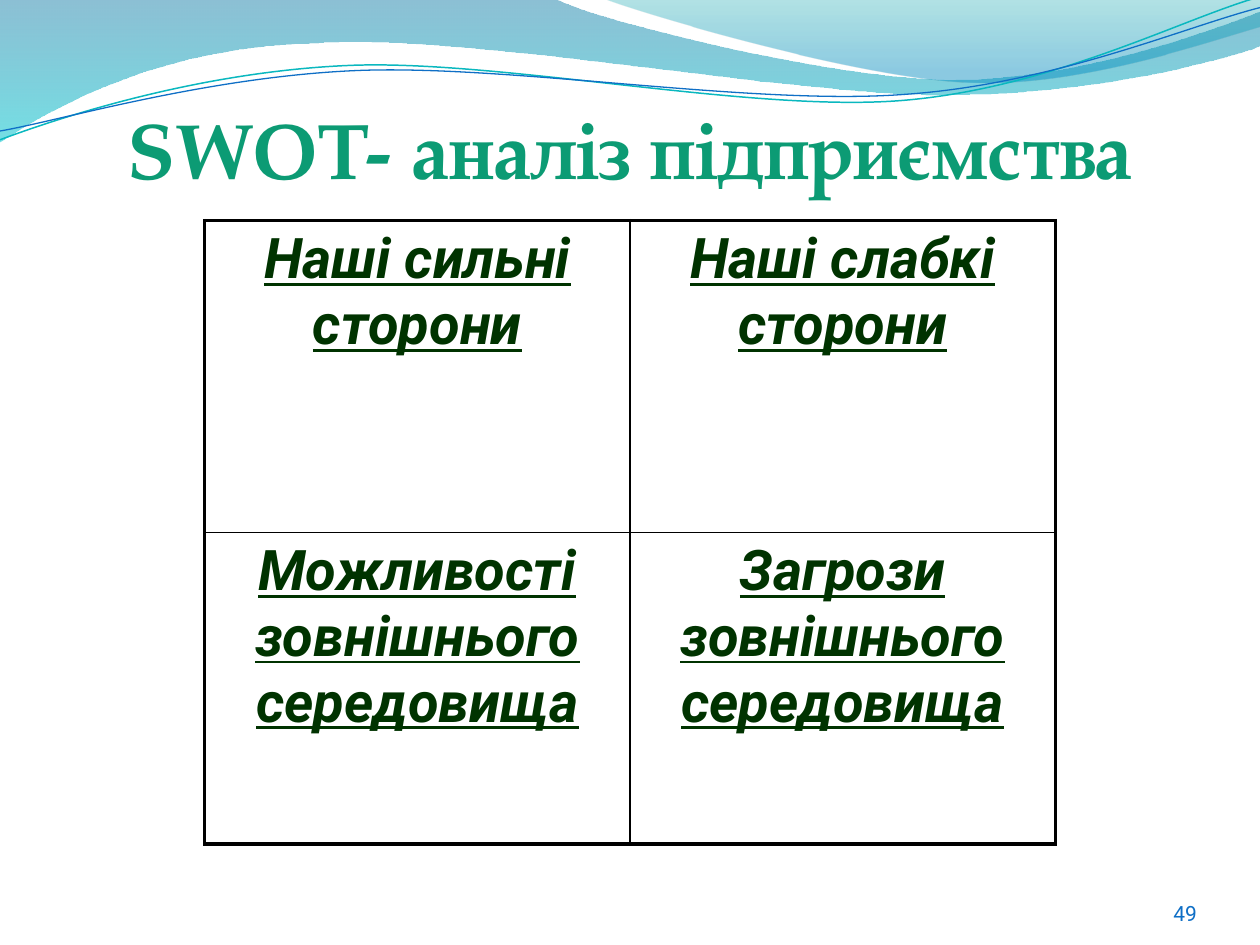
from dataclasses import dataclass
from math import cos, radians, sin

from lxml.etree import SubElement
from pptx import Presentation
from pptx.dml.color import RGBColor
from pptx.enum.text import MSO_ANCHOR, PP_ALIGN
from pptx.oxml.ns import qn
from pptx.util import Inches, Pt

COLORS = {
    "title": "0C9B74", "quadrant": "003300", "border": "000000", "number": "0F6FC6",
    "deep_blue": "0074A1", "aqua": "00C6CF", "teal": "00A1A9", "sky": "008BBF",
    "teal_line": "0AB8BF", "blue_line": "0F6FC6",
}
BODY_FONT = "Roboto"
TITLE_FONT = "TeX Gyre Pagella"
SLIDE_WIDTH = 10
TABLE_WIDTH = 6.75
QUADRANTS = [
    ["Наші сильні сторони", "Наші слабкі сторони"],
    ["Можливості зовнішнього середовища", "Загрози зовнішнього середовища"],
]


@dataclass
class GradientStop:
    position: float
    color: str
    opacity: int


@dataclass
class Outline:
    frame: tuple[float, float, float, float]
    steps: list[tuple[float, ...]]
    rotation: float = 0


@dataclass
class Band:
    outline: Outline
    stops: list[GradientStop]


@dataclass
class Ripple:
    outline: Outline
    color: str
    weight: float


BANDS = [
    Band(Outline((-0.01, -0.01, 10.02, 1.14), [
        (0, 0), (4.4, -0.01), (4.76, 0.17, 6.64, 0.63, 7.58, 0.63),
        (8.53, 0.63, 9.58, 0.26, 10, 0.09), (10.01, 0.36),
        (9.83, 0.44, 8.7, 0.76, 7.46, 0.75), (6.22, 0.75, 3.82, 0.28, 2.57, 0.34),
        (1.29, 0.36, 0.46, 0.83, -0.01, 1.13), (0, 0)]),
        [GradientStop(0, "deep_blue", 45), GradientStop(1, "aqua", 55)]),
    Band(Outline((4.79, -0.01, 5.21, 0.7), [
        (4.79, -0.01), (5.09, 0.11, 6.82, 0.62, 7.69, 0.65),
        (8.56, 0.69, 9.61, 0.32, 10, 0.21), (10, 0), (4.79, -0.01)]),
        [GradientStop(0, "teal", 30), GradientStop(0.8, "sky", 45)]),
]
RIPPLES = [
    Ripple(Outline((-0.02, 0.22, 10.02, 0.71), [
        (0, 1.11), (0.48, 0.93, 1.58, 0.57, 2.77, 0.52),
        (3.95, 0.47, 5.93, 0.89, 7.13, 0.8), (8.33, 0.71, 9.38, 0.15, 9.98, -0.02)],
        357.3), "teal_line", 0.85),
    Ripple(Outline((-0.02, 0.3, 10.03, 0.58), [
        (0, 1.04), (0.47, 0.96, 1.64, 0.61, 2.83, 0.56),
        (4.03, 0.51, 5.97, 0.84, 7.17, 0.75), (8.36, 0.67, 9.41, 0.21, 10, 0.06)],
        357.3), "blue_line", 0.75),
]


def rgb(name: str) -> RGBColor:
    """Look up a named colour."""
    return RGBColor.from_string(COLORS[name])


def local_point(outline: Outline, x: float, y: float) -> tuple[int, int]:
    """Express a slide point in the unrotated frame of an outline."""
    left, top, width, height = outline.frame
    dx, dy = x - left - width / 2, y - top - height / 2
    angle = radians(-outline.rotation)
    return (Inches(width / 2 + dx * cos(angle) - dy * sin(angle)),
            Inches(height / 2 + dx * sin(angle) + dy * cos(angle)))


def draw_outline(slide, outline: Outline, closed: bool):
    """Draw a freeform of straight and cubic steps."""
    left, top, width, height = (Inches(length) for length in outline.frame)
    builder = slide.shapes.build_freeform(left, top)
    builder.add_line_segments([(left + width, top + height)], close=False)
    shape = builder.convert_to_shape()
    shape.left, shape.top, shape.width, shape.height = left, top, width, height
    shape.rotation = outline.rotation
    shape.shadow.inherit = False
    route = next(shape._element.spPr.iter(qn("a:path")))
    for segment in list(route):
        route.remove(segment)
    route.set("w", str(width))
    route.set("h", str(height))
    for index, step in enumerate(outline.steps):
        kind = "cubicBezTo" if len(step) == 6 else "lnTo" if index else "moveTo"
        segment = SubElement(route, qn(f"a:{kind}"))
        for point in zip(step[::2], step[1::2]):
            x, y = local_point(outline, *point)
            SubElement(segment, qn("a:pt"), x=str(x), y=str(y))
    if closed:
        SubElement(route, qn("a:close"))
    return shape


def draw_band(slide, band: Band) -> None:
    """Draw a translucent wave with a downward gradient."""
    shape = draw_outline(slide, band.outline, closed=True)
    shape.line.fill.background()
    shape.fill.gradient()
    shape.fill.gradient_angle = 270
    for target, stop in zip(shape.fill.gradient_stops, band.stops):
        target.position = stop.position
        target.color.rgb = rgb(stop.color)
    gradient = shape._element.spPr.find(qn("a:gradFill"))
    for color, stop in zip(gradient.iter(qn("a:srgbClr")), band.stops):
        SubElement(color, qn("a:alpha"), val=str(stop.opacity * 1000))


def draw_ripple(slide, ripple: Ripple) -> None:
    """Draw a thin wavy line."""
    shape = draw_outline(slide, ripple.outline, closed=False)
    shape.fill.background()
    shape.line.color.rgb = rgb(ripple.color)
    shape.line.width = Pt(ripple.weight)


def write(frame, text: str, *, size: float, color: str, font: str = BODY_FONT,
          align=PP_ALIGN.CENTER, bold: bool = False, italic: bool = False,
          underline: bool = False) -> None:
    """Write one formatted paragraph, without pair kerning, into a text frame."""
    frame.word_wrap = True
    paragraph = frame.paragraphs[0]
    paragraph.alignment = align
    run = paragraph.add_run()
    run.text = text
    run.font.name, run.font.size = font, Pt(size)
    run.font.bold, run.font.italic, run.font.underline = bold, italic, underline
    run.font.color.rgb = rgb(color)
    run._r.get_or_add_rPr().set("kern", "0")


def add_caption(slide, text: str, left: float, top: float, width: float, height: float,
                top_inset: float = 0, **style) -> None:
    """Add a bottom-anchored text box."""
    frame = slide.shapes.add_textbox(
        Inches(left), Inches(top), Inches(width), Inches(height)).text_frame
    frame.margin_left = frame.margin_right = frame.margin_bottom = 0
    frame.margin_top = Inches(top_inset)
    frame.vertical_anchor = MSO_ANCHOR.BOTTOM
    write(frame, text, **style)


def set_borders(cell, widths: dict[str, float]) -> None:
    """Give each side of a cell a solid border."""
    properties = cell._tc.get_or_add_tcPr()
    for side, width in widths.items():
        line = SubElement(properties, qn(f"a:ln{side}"), w=str(Pt(width)))
        solid = SubElement(line, qn("a:solidFill"))
        SubElement(solid, qn("a:srgbClr"), val=COLORS["border"])


def draw_matrix(slide) -> None:
    """Draw the centred SWOT table with a heavy frame and thin inner lines."""
    outer, inner = 2.25, 1
    table = slide.shapes.add_table(
        2, 2, Inches((SLIDE_WIDTH - TABLE_WIDTH) / 2), Inches(1.75),
        Inches(TABLE_WIDTH), Inches(4.95)).table
    table.first_row = table.horz_banding = False
    for row, headings in enumerate(QUADRANTS):
        for column, heading in enumerate(headings):
            cell = table.cell(row, column)
            cell.margin_left = cell.margin_right = Inches(0.07)
            cell.margin_top = cell.margin_bottom = Inches(0.05)
            set_borders(cell, {
                "L": inner if column else outer, "R": outer if column else inner,
                "T": inner if row else outer, "B": outer if row else inner})
            cell.fill.background()
            write(cell.text_frame, heading, size=32, color="quadrant",
                  bold=True, italic=True, underline=True)


def main() -> None:
    """Build the SWOT slide."""
    presentation = Presentation()
    presentation.slide_width, presentation.slide_height = Inches(SLIDE_WIDTH), Inches(7.5)
    slide = presentation.slides.add_slide(presentation.slide_layouts[6])
    for band in BANDS:
        draw_band(slide, band)
    for ripple in RIPPLES:
        draw_ripple(slide, ripple)
    add_caption(slide, "SWOT- аналіз підприємства", 0.5, 0.3, 9, 1.25, top_inset=0.05,
                size=45, color="title", font=TITLE_FONT, bold=True)
    draw_matrix(slide)
    add_caption(slide, "49", 8.67, 6.95, 0.83, 0.4,
                size=12, color="number", align=PP_ALIGN.RIGHT)
    presentation.save("out.pptx")


if __name__ == "__main__":
    main()
